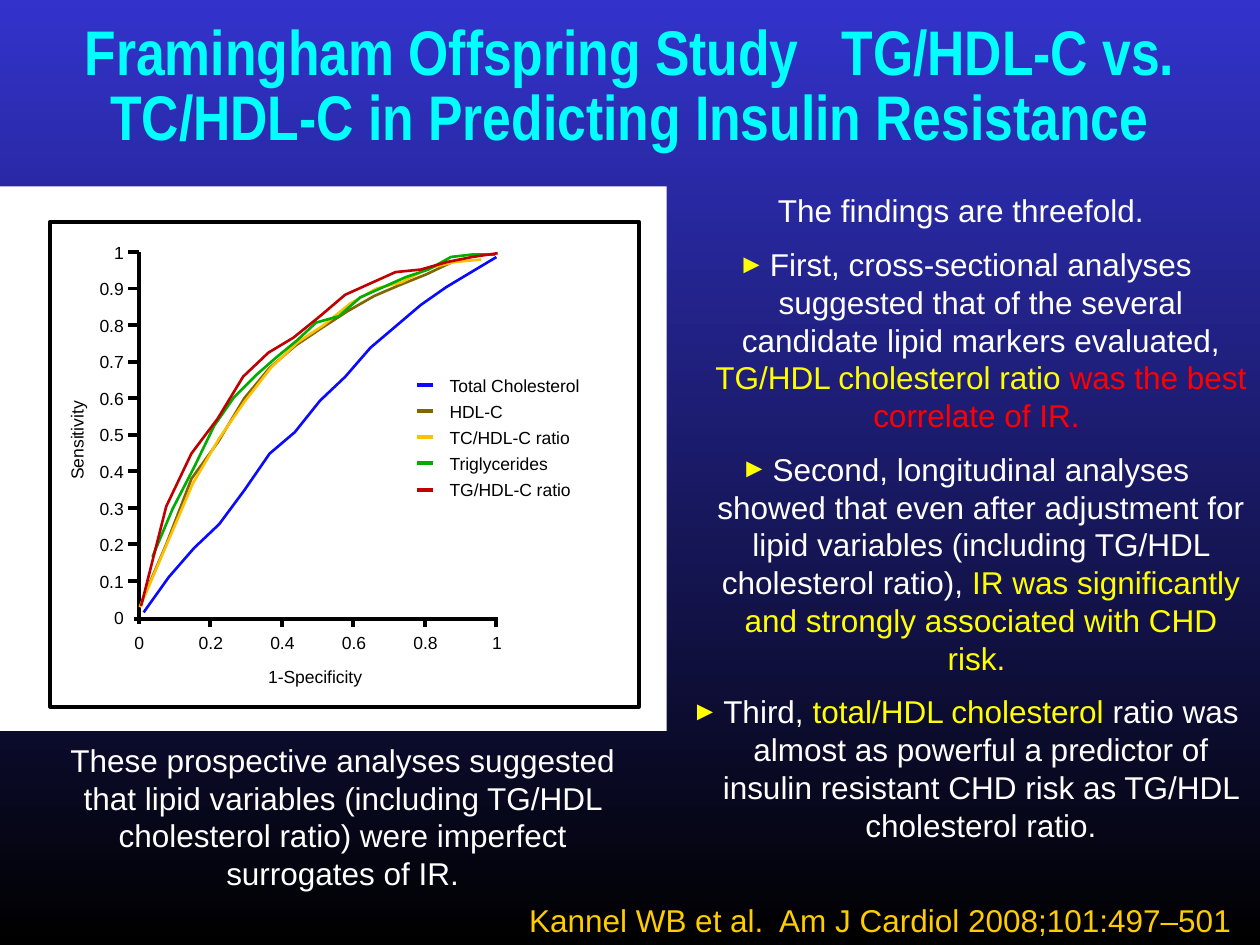
import dataclasses

import lxml.etree
import pptx
import pptx.dml.color
import pptx.enum.shapes
import pptx.enum.text
import pptx.oxml.ns
import pptx.util

Inches = pptx.util.Inches
Pt = pptx.util.Pt
ALIGN = pptx.enum.text.PP_ALIGN
ANCHOR = pptx.enum.text.MSO_ANCHOR
AUTO_SIZE = pptx.enum.text.MSO_AUTO_SIZE


@dataclasses.dataclass(frozen=True)
class Theme:
    """Colours, fonts and sizes of the slide."""
    sky: str = "3333CC"
    black: str = "000000"
    white: str = "FFFFFF"
    cyan: str = "00FFFF"
    yellow: str = "FFFF00"
    red: str = "FF0000"
    gold: str = "FFCC00"
    heading_font: str = "Arial Narrow"
    body_font: str = "Arial"
    heading_size: int = 36
    body_size: int = 18
    label_size: int = 10
    axis_width: float = 2.25
    curve_width: float = 1.5


THEME = Theme()

SERIES = [
    ("Total Cholesterol", "0A0AFF", [
        (4, 284, [286, 258, 235, 216, 189, 160, 143, 118, 99, 76, 59, 42, 28, 16, 4])]),
    ("HDL-C", "806600", [
        (1, 249, [281, 232, 180, 151, 116, 92, 74, 60, 47, 35, 26, 18, 8])]),
    ("TC/HDL-C ratio", "FFC000", [
        (1, 272, [282, 233, 184, 148, 119, 92, 72, 58, 41, 29, 24, 13, 8, 6])]),
    ("Triglycerides", "00AD00", [
        (11, 142, [242, 204, 171, 138, 115, 98, 84, 70, 55]),
        (141, 283, [56, 51, 36, 28, 20, 14, 4, 2, 2])]),
    ("TG/HDL-C ratio", "C00000", [
        (2, 285, [281, 202, 160, 132, 99, 80, 68, 51, 34, 25, 16, 14, 8, 4, 1])]),
]

FINDINGS = [
    [("The findings are threefold. ", THEME.white)],
    [("First, cross-sectional analyses suggested that of the several candidate lipid markers "
      "evaluated, ", THEME.white),
     ("TG/HDL cholesterol ratio ", THEME.yellow),
     ("was the best correlate of IR. ", THEME.red)],
    [("Second, longitudinal analyses showed that even after adjustment for lipid variables "
      "(including TG/HDL cholesterol ratio), ", THEME.white),
     ("IR was significantly and strongly associated with CHD risk. ", THEME.yellow)],
    [("Third, ", THEME.white),
     ("total/HDL cholesterol ", THEME.yellow),
     ("ratio was almost as powerful a predictor of insulin resistant CHD risk as TG/HDL "
      "cholesterol ratio.", THEME.white)],
]


def rgb(code):
    """Return the colour for a hex code."""
    return pptx.dml.color.RGBColor.from_string(code)


def assign(target, values):
    """Set each named value on the target."""
    for name, value in values.items():
        setattr(target, name, value)


def add_text(slide, box, paragraphs, size, font=THEME.body_font, bold=False,
             frame_format=None, paragraph_format=None):
    """Add a text box holding paragraphs of (wording, colour) runs."""
    holder = slide.shapes.add_textbox(*map(Inches, box))
    frame = holder.text_frame
    assign(frame, {"word_wrap": True, "auto_size": AUTO_SIZE.SHAPE_TO_FIT_TEXT,
                   **(frame_format or {})})
    for index, runs in enumerate(paragraphs):
        paragraph = frame.add_paragraph() if index else frame.paragraphs[0]
        spacing = {"space_before": Pt(size / 2)} if index else {}
        assign(paragraph, {"alignment": ALIGN.CENTER, **spacing, **(paragraph_format or {})})
        for wording, colour in runs:
            run = paragraph.add_run()
            run.text = wording
            assign(run.font, {"name": font, "size": Pt(size), "bold": bold})
            run.font.color.rgb = rgb(colour)
    return holder


def add_label(slide, box, wording, alignment=ALIGN.CENTER):
    """Add a small black label of the plot."""
    return add_text(slide, box, [[(wording, THEME.black)]], THEME.label_size,
                    paragraph_format={"alignment": alignment})


def add_line(slide, start, end, colour=THEME.black):
    """Add a straight line without a shadow."""
    line = slide.shapes.add_connector(pptx.enum.shapes.MSO_CONNECTOR.STRAIGHT,
                                      *map(Inches, (*start, *end)))
    line.line.color.rgb = rgb(colour)
    line.line.width = Pt(THEME.axis_width)
    lxml.etree.SubElement(line._element.spPr, pptx.oxml.ns.qn("a:effectLst"))


def add_bullet(paragraph):
    """Give a paragraph a yellow arrow bullet with a hanging indent."""
    qn = pptx.oxml.ns.qn
    properties = paragraph._p.get_or_add_pPr()
    for name, value in {"marL": Inches(0.25), "indent": -Inches(0.25)}.items():
        properties.set(name, str(value))
    colour = lxml.etree.SubElement(properties, qn("a:buClr"))
    lxml.etree.SubElement(colour, qn("a:srgbClr"), val=THEME.yellow)
    lxml.etree.SubElement(properties, qn("a:buSzPct"), val="85000")
    lxml.etree.SubElement(properties, qn("a:buFont"), typeface=THEME.body_font)
    lxml.etree.SubElement(properties, qn("a:buChar"), char="►")


def add_panel(slide, box, fill=None, outline=None):
    """Add a plain rectangle with an optional fill and outline."""
    panel = slide.shapes.add_shape(pptx.enum.shapes.MSO_SHAPE.RECTANGLE, *map(Inches, box))
    panel.shadow.inherit = False
    for part, colour in ((panel.fill, fill), (panel.line.fill, outline)):
        if colour:
            part.solid()
            part.fore_color.rgb = rgb(colour)
        else:
            part.background()
    if outline:
        panel.line.width = Pt(THEME.axis_width)


def add_axes(slide, box):
    """Draw both axes with ticks, tick labels and titles around the plot box."""
    left, top, width, height = box
    bottom = top + height
    add_line(slide, (left, top), (left, bottom + 0.05))
    add_line(slide, (left - 0.04, bottom + 0.01), (left + width, bottom + 0.01))
    for step in range(11):
        y = top + step * height / 10
        if step < 10:
            add_line(slide, (left - 0.08, y), (left, y))
        add_label(slide, (left - 0.41, y - 0.13, 0.39, 0.27), f"{1 - step / 10:.1g}", ALIGN.RIGHT)
    for step in range(6):
        x = left + step * width / 5
        if step:
            add_line(slide, (x, bottom + 0.08), (x, bottom))
        add_label(slide, (x - 0.19, bottom + 0.07, 0.39, 0.27), f"{step / 5:g}")
    add_label(slide, (left + 0.84, bottom + 0.34, 1.12, 0.27), "1-Specificity")
    add_label(slide, (left - 1.05, top + 1.36, 1.12, 0.27), "Sensitivity").rotation = 270


def add_curves(slide, box):
    """Draw evenly spaced depths in hundredths of an inch from the plot corner."""
    left, top = map(Inches, box[:2])
    for _, colour, pieces in SERIES:
        for start, end, depths in pieces:
            step = (end - start) / (len(depths) - 1)
            first, *rest = [(start + index * step, depth) for index, depth in enumerate(depths)]
            builder = slide.shapes.build_freeform(*first, scale=float(Inches(0.01)))
            builder.add_line_segments(rest, close=False)
            curve = builder.convert_to_shape(left, top)
            curve.shadow.inherit = False
            curve.fill.background()
            curve.line.color.rgb = rgb(colour)
            curve.line.width = Pt(THEME.curve_width)


def add_legend(slide, box):
    """List the series with their colours in equal rows."""
    left, top, width, height = box
    row = height / len(SERIES)
    for index, (label, colour, _) in enumerate(SERIES):
        y = top + (index + 0.5) * row
        add_line(slide, (left, y), (left + 0.13, y), colour)
        add_label(slide, (left + 0.16, y - 0.13, width - 0.16, 0.27), label, ALIGN.LEFT)


def add_plot(slide, box):
    """Place the white panel, its frame and the plot inside it."""
    left, top, width, height = box
    plot = (left + 1.1, top + 0.52, 2.84, 2.9)
    add_panel(slide, box, fill=THEME.white)
    add_panel(slide, (left + 0.4, top + 0.28, width - 0.62, height - 0.47), outline=THEME.black)
    add_axes(slide, plot)
    add_curves(slide, plot)
    add_legend(slide, (left + 3.31, top + 1.47, 1.7, 1.04))


def add_heading(slide, box):
    """Place the slide heading."""
    wording = "Framingham Offspring Study   TG/HDL-C vs. TC/HDL-C in Predicting Insulin Resistance"
    add_text(slide, box, [[(wording, THEME.cyan)]], THEME.heading_size, THEME.heading_font, True,
             {"vertical_anchor": ANCHOR.MIDDLE, "auto_size": AUTO_SIZE.NONE},
             {"line_spacing": 0.85})


def add_findings(slide, box):
    """Place the introduction and the three bulleted findings."""
    findings = add_text(slide, box, FINDINGS, THEME.body_size)
    for paragraph in findings.text_frame.paragraphs[1:]:
        add_bullet(paragraph)


def add_conclusion(slide, box):
    """Place the conclusion below the plot."""
    wording = ("These prospective analyses suggested that lipid variables (including TG/HDL "
               "cholesterol ratio) were imperfect surrogates of IR.")
    add_text(slide, box, [[(wording, THEME.white)]], THEME.body_size)


def add_citation(slide, box):
    """Place the literature reference."""
    wording = "Kannel WB et al.  Am J Cardiol 2008;101:497–501"
    add_text(slide, box, [[(wording, THEME.gold)]], THEME.body_size,
             paragraph_format={"alignment": ALIGN.RIGHT})


def paint_background(slide):
    """Fill the background with a vertical gradient."""
    fill = slide.background.fill
    fill.gradient()
    fill.gradient_angle = 270
    for stop, colour, position in zip(fill.gradient_stops, (THEME.sky, THEME.black), (0, 1)):
        stop.color.rgb = rgb(colour)
        stop.position = position


def main():
    """Build and save the slide."""
    deck = pptx.Presentation()
    assign(deck, {"slide_width": Inches(10), "slide_height": Inches(7.5)})
    slide = deck.slides.add_slide(deck.slide_layouts[6])
    paint_background(slide)
    add_plot(slide, (0, 1.48, 5.29, 4.32))
    add_heading(slide, (0, 0.08, 10, 1.25))
    add_citation(slide, (0.67, 7.1, 9.2, 0.4))
    add_findings(slide, (5.32, 1.47, 4.68, 5.1))
    add_conclusion(slide, (0.29, 5.83, 4.86, 1.31))
    deck.save("out.pptx")


if __name__ == "__main__":
    main()
